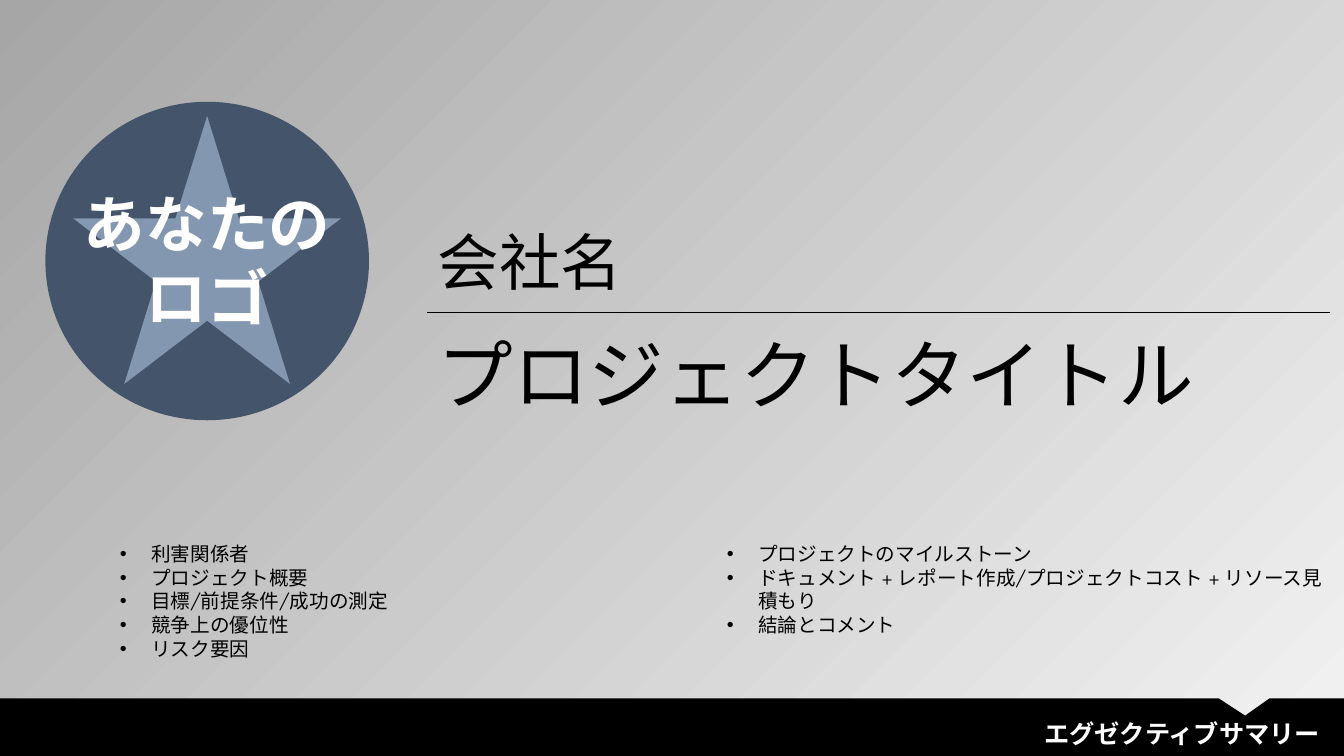
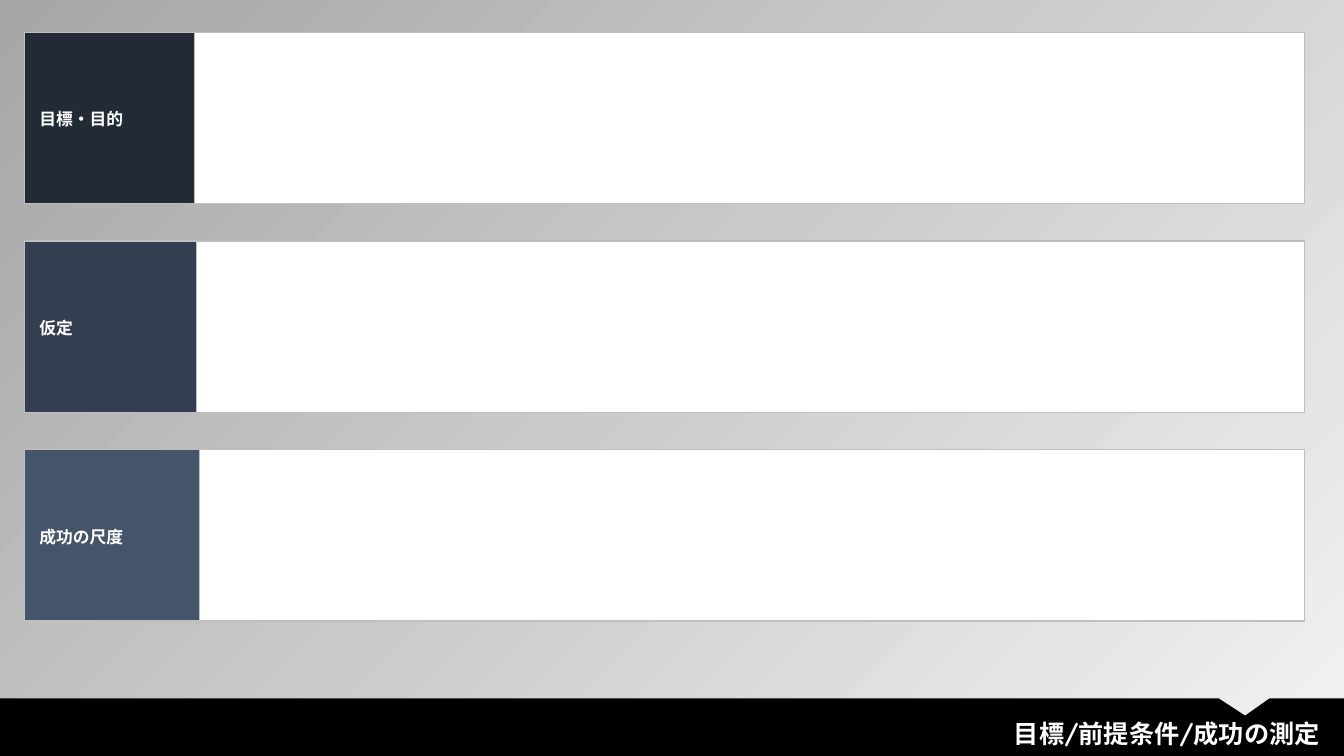
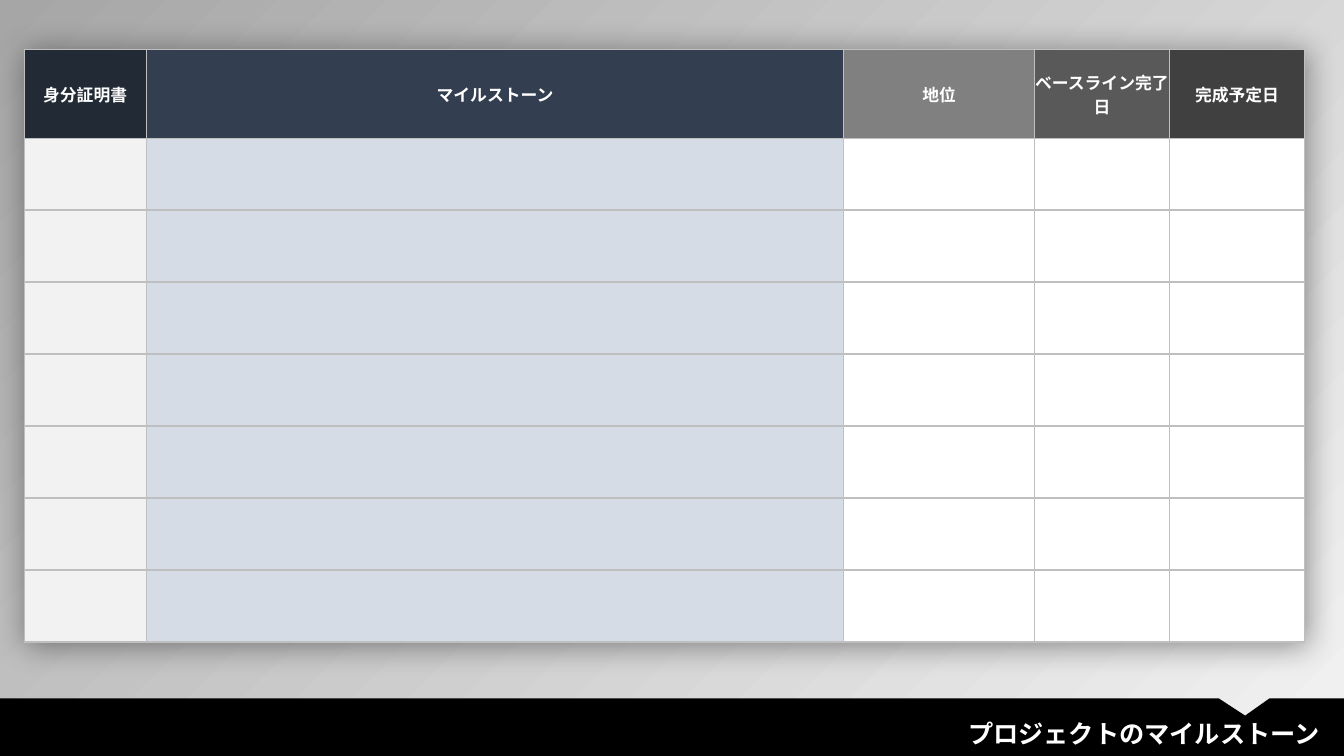
from lxml import etree
from pptx import Presentation
from pptx.dml.color import RGBColor
from pptx.enum.shapes import MSO_CONNECTOR, MSO_SHAPE
from pptx.enum.text import MSO_ANCHOR, MSO_AUTO_SIZE, PP_ALIGN
from pptx.oxml.ns import qn
from pptx.util import Inches, Pt

LEFT, CENTER, RIGHT = PP_ALIGN.LEFT, PP_ALIGN.CENTER, PP_ALIGN.RIGHT
TOP, MIDDLE = MSO_ANCHOR.TOP, MSO_ANCHOR.MIDDLE
NO_FIT = MSO_AUTO_SIZE.NONE
ELLIPSE, STAR = MSO_SHAPE.OVAL, MSO_SHAPE.STAR_5_POINT
STRAIGHT = MSO_CONNECTOR.STRAIGHT

WIDTH, HEIGHT = 13.33, 7.5
FONT = "Quicksand"
TITLE_ONLY = 5
COLORS = {
    "black": "000000",
    "white": "FFFFFF",
    "pale": "F2F2F2",
    "border": "BFBFBF",
    "shade": "A6A6A6",
    "gray": "808080",
    "dark gray": "595959",
    "charcoal": "404040",
    "midnight": "222A35",
    "navy": "333F50",
    "slate": "44546A",
    "steel": "8497B0",
    "mist": "D6DCE5",
}
BAND = (0, 6.93, WIDTH, 0.57)
MARGIN, TABLE_WIDTH = 0.24, 12.7

AGENDA = [
    ["利害関係者", "プロジェクト概要", "目標/前提条件/成功の測定", "競争上の優位性", "リスク要因"],
    ["プロジェクトのマイルストーン",
     "ドキュメント + レポート作成/プロジェクトコスト + リソース見積もり",
     "結論とコメント"],
]
GOALS = [
    ("目標・目的", "midnight", 1.69),
    ("仮定", "navy", 1.71),
    ("成功の尺度", "slate", 1.74),
]
MILESTONE_COLUMNS = [
    ("身分証明書", 1.21, "midnight", "pale"),
    ("マイルストーン", 6.92, "navy", "mist"),
    ("地位", 1.89, "gray", "white"),
    ("ベースライン完了日", 1.34, "dark gray", "white"),
    ("完成予定日", 1.34, "charcoal", "white"),
]


def rgb(name):
    """Return the named colour of the palette."""
    return RGBColor.from_string(COLORS[name])


def inches(box):
    """Convert a box in inches to lengths."""
    return [Inches(value) for value in box]


def write(frame, text, size=18, color="black", bold=False, align=LEFT,
          anchor=TOP, bullet=False, inset=None, spacing=None):
    """Fill a text frame with one paragraph for each line of the text."""
    frame.word_wrap = True
    frame.vertical_anchor = anchor
    if inset is not None:
        frame.margin_left = frame.margin_right = Inches(inset)
        frame.margin_top = frame.margin_bottom = Inches(inset)
    for index, line in enumerate(text.split("\n")):
        para = frame.add_paragraph() if index else frame.paragraphs[0]
        para.alignment = align
        para.line_spacing = spacing
        span = para.add_run()
        span.text = line
        span.font.size, span.font.bold = Pt(size), bold
        span.font.color.rgb = rgb(color)
        span.font.name = FONT
        etree.SubElement(span.font._element, qn("a:ea"), typeface=FONT)
        if bullet:
            props = para._p.get_or_add_pPr()
            props.set("marL", str(Inches(0.31)))
            props.set("indent", str(-Inches(0.31)))
            etree.SubElement(props, qn("a:buFont"), typeface="Arial")
            etree.SubElement(props, qn("a:buChar"), char="•")


def add_text(page, box, text, **style):
    """Add a text box."""
    write(page.shapes.add_textbox(*inches(box)).text_frame, text, **style)


def set_title(page, box, text, **style):
    """Move the title placeholder to the front and format it."""
    title = page.shapes.title
    title.left, title.top, title.width, title.height = inches(box)
    title.text_frame.auto_size = NO_FIT
    write(title.text_frame, text, **style)
    page.shapes._spTree.append(title._element)


def paint(shape, color):
    """Give a shape a flat fill without outline or shadow."""
    shape.fill.solid()
    shape.fill.fore_color.rgb = rgb(color)
    shape.line.fill.background()
    shape.shadow.inherit = False


def set_background(master):
    """Give every slide the diagonal gray gradient."""
    fill = master.background.fill
    fill.gradient()
    fill.gradient_angle = 135
    for stop, color in zip(fill.gradient_stops, ("pale", "shade")):
        stop.color.rgb = rgb(color)
    first_stop = master.element.find(".//" + qn("p:bg")).find(".//" + qn("a:gs"))
    etree.SubElement(first_stop[0], qn("a:alpha"), val="40000")


def add_footer(page, box, text, place_text):
    """Draw the notched band and its right-aligned caption."""
    left, top, width, height = box
    right, bottom = left + width, top + height
    outline = [(right - 1.24, top), (right - 0.98, top + 0.17), (right - 0.74, top),
               (right, top), (right, bottom), (left, bottom)]
    builder = page.shapes.build_freeform(Inches(left), Inches(top))
    builder.add_line_segments([inches(point) for point in outline], close=True)
    paint(builder.convert_to_shape(), "black")
    place_text(page, (right - 6.92, top + 0.15, 6.78, 0.4), text,
               color="white", bold=True, align=RIGHT)


def add_emblem(page, box):
    """Draw the round emblem with its star and words."""
    left, top, width, height = box
    side = 2.66
    star_left = left + (width - side) / 2
    paint(page.shapes.add_shape(ELLIPSE, *inches(box)), "slate")
    star_box = (star_left, top + 0.14, side, side)
    paint(page.shapes.add_shape(STAR, *inches(star_box)), "steel")
    add_text(page, (star_left, top + height / 4, side, height / 2), "あなたの\nロゴ",
             size=44, color="white", bold=True, align=CENTER)


def add_heading(page, box):
    """Place the company name, the rule and the project title."""
    left, top, width, height = box
    rule_top = top + 0.93
    add_text(page, (left, top, 7.79, 0.84), "会社名", size=44)
    set_title(page, (left, rule_top + 0.1, 8.59, 1.01), "プロジェクトタイトル", size=54)
    rule = page.shapes.add_connector(
        STRAIGHT, *inches((left, rule_top, left + width, rule_top)))
    rule.line.color.rgb = rgb("black")
    rule.line.width = Pt(0.5)
    etree.SubElement(rule._element.spPr, qn("a:effectLst"))


def add_agenda(page, box):
    """List the agenda in equal columns."""
    left, top, width, height = box
    column_width = width / len(AGENDA)
    for index, items in enumerate(AGENDA):
        add_text(page, (left + index * column_width, top, column_width, height),
                 "\n".join(items), size=14, bullet=True, inset=0)


def add_grid(page, box, widths, heights):
    """Add a plain table with the given column widths and row heights."""
    frame = page.shapes.add_table(len(heights), len(widths), *inches(box))
    table = frame.table
    table.first_row = table.horz_banding = False
    for column, width in zip(table.columns, widths):
        column.width = Inches(width)
    for row, height in zip(table.rows, heights):
        row.height = Inches(height)
    return table


def format_cell(cell, color, text="", inset=0, align=LEFT):
    """Set the fill, the borders and any text of a cell."""
    cell.fill.solid()
    cell.fill.fore_color.rgb = rgb(color)
    props = cell._tc.get_or_add_tcPr()
    for index, side in enumerate(("lnL", "lnR", "lnT", "lnB")):
        line = etree.Element(qn("a:" + side), w=str(Pt(1)))
        solid = etree.SubElement(line, qn("a:solidFill"))
        etree.SubElement(solid, qn("a:srgbClr"), val=COLORS["border"])
        props.insert(index, line)
    if text:
        write(cell.text_frame, text, size=12, color="white", bold=True,
              align=align, spacing=1.15)
        cell.vertical_anchor = MIDDLE
        cell.margin_left = cell.margin_right = Inches(inset)
        cell.margin_top = cell.margin_bottom = Inches(inset)


def add_goals(page, box):
    """Stack one labelled table for each goal at equal gaps."""
    left, top, width, height = box
    row_height = 1.7
    step = (height - row_height) / (len(GOALS) - 1)
    for index, (label, color, label_width) in enumerate(GOALS):
        table = add_grid(page, (left, top + index * step, width, row_height),
                         (label_width, width - label_width), (row_height,))
        format_cell(table.cell(0, 0), color, label, inset=0.15)
        format_cell(table.cell(0, 1), "white")


def add_table_shadow(table):
    """Add a soft shadow around a table."""
    effects = etree.Element(qn("a:effectLst"))
    shadow = etree.SubElement(
        effects, qn("a:outerShdw"), blurRad=str(Inches(0.3)), dist=str(Inches(0.04)),
        dir="2700000", algn="tl", rotWithShape="0")
    color = etree.SubElement(shadow, qn("a:srgbClr"), val=COLORS["black"])
    etree.SubElement(color, qn("a:alpha"), val="40000")
    table._tbl.tblPr.insert(0, effects)


def add_milestones(page, box):
    """Draw the milestone table with its header and seven empty rows."""
    header_height, row_count = 0.88, 7
    row_height = (box[3] - header_height) / row_count
    widths = [column[1] for column in MILESTONE_COLUMNS]
    table = add_grid(page, box, widths, [header_height] + [row_height] * row_count)
    add_table_shadow(table)
    for index, (label, _, head_color, body_color) in enumerate(MILESTONE_COLUMNS):
        format_cell(table.cell(0, index), head_color, label, align=CENTER)
        for row in range(1, row_count + 1):
            format_cell(table.cell(row, index), body_color)


def build_cover(page):
    """Build the cover slide."""
    add_footer(page, BAND, "エグゼクティブサマリー", add_text)
    add_emblem(page, (0.45, 1.01, 3.21, 3.16))
    add_heading(page, (4.24, 2.17, 8.95, 2.04))
    add_agenda(page, (1.19, 5.38, 12.04, 1.41))


def build_goals(page):
    """Build the slide of goals, assumptions and measures."""
    add_footer(page, BAND, "目標/前提条件/成功の測定", set_title)
    add_goals(page, (MARGIN, 0.32, TABLE_WIDTH, 5.84))


def build_milestones(page):
    """Build the milestone slide."""
    add_footer(page, BAND, "プロジェクトのマイルストーン", set_title)
    add_milestones(page, (MARGIN, 0.49, TABLE_WIDTH, 5.88))


def main():
    """Build and save the deck."""
    deck = Presentation()
    deck.slide_width, deck.slide_height = Inches(WIDTH), Inches(HEIGHT)
    set_background(deck.slide_master)
    for build in (build_cover, build_goals, build_milestones):
        build(deck.slides.add_slide(deck.slide_layouts[TITLE_ONLY]))
    deck.save("out.pptx")


if __name__ == "__main__":
    main()
